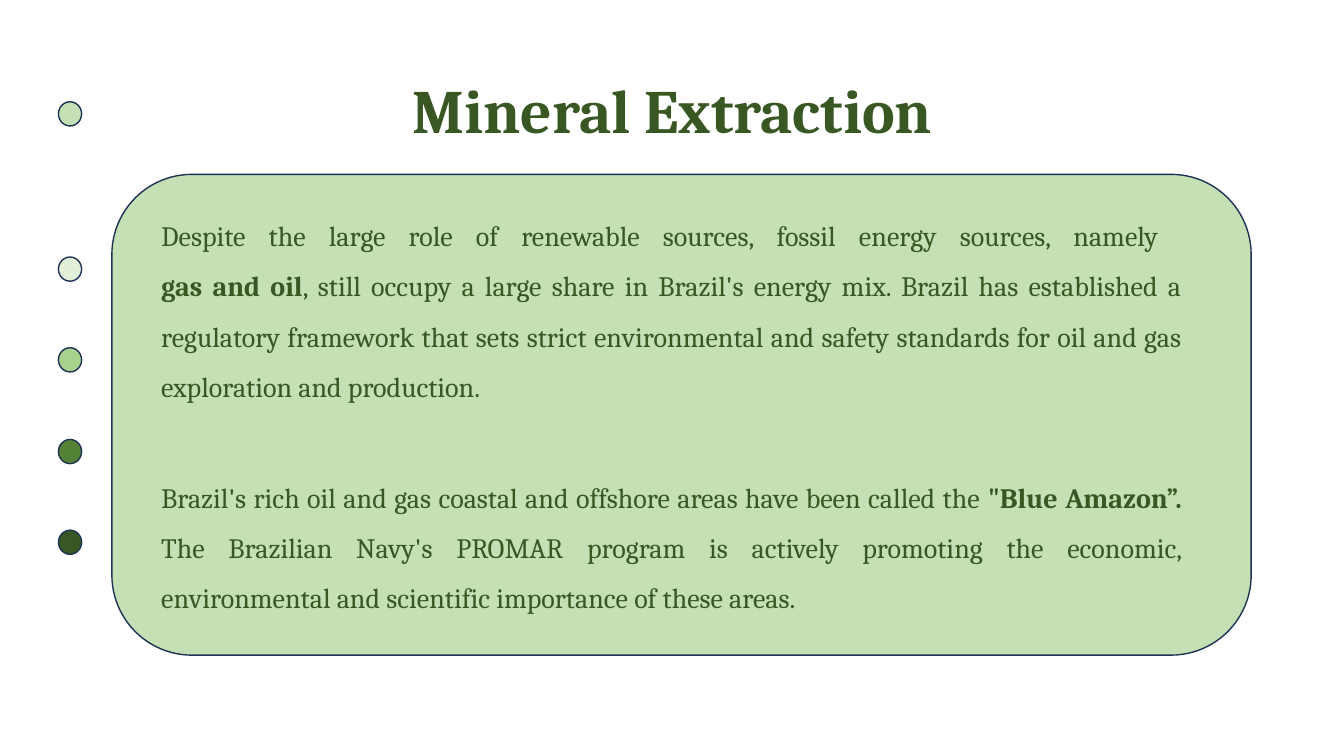
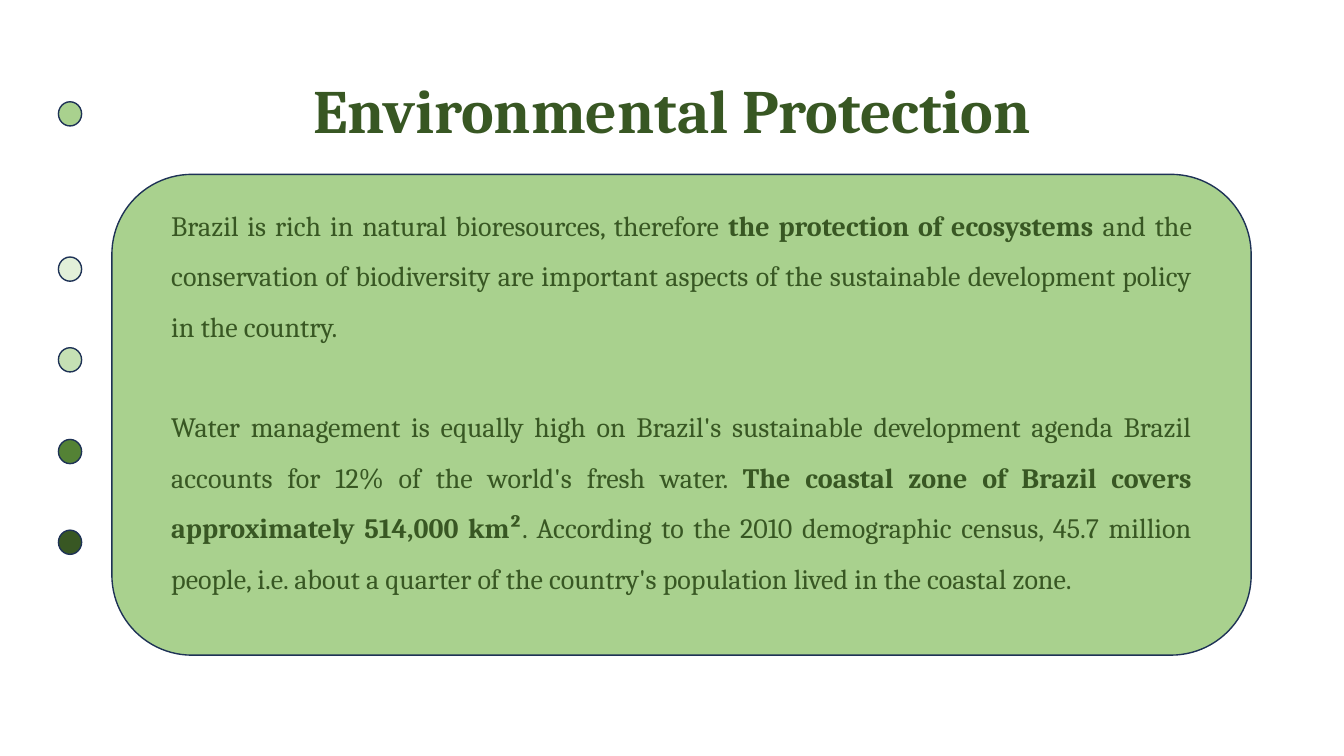
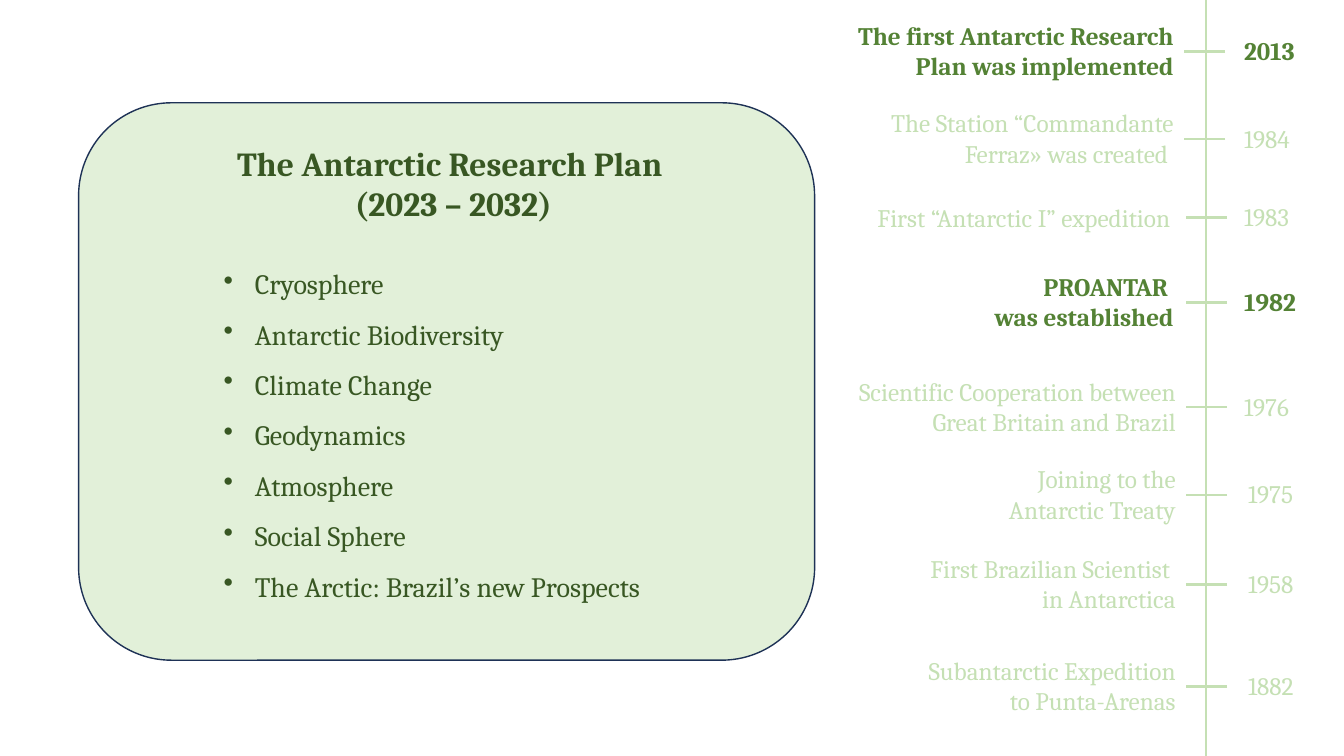
from lxml import etree
from pptx import Presentation
from pptx.dml.color import RGBColor
from pptx.enum import shapes, text
from pptx.oxml import ns
from pptx.util import Pt

PX = 9144  # 100 px to the inch
FONT = "Cambria"
PALE, LIGHT, MID, DARK, DEEP = GREENS = "E2F0D9", "C5E0B4", "A9D18E", "548235", "385723"
OUTLINE = "1E3256"
TITLE_ONLY, BLANK = 5, 6
LEFT, CENTER, RIGHT, JUSTIFY = (text.PP_ALIGN.LEFT, text.PP_ALIGN.CENTER,
                                text.PP_ALIGN.RIGHT, text.PP_ALIGN.JUSTIFY)

# Text: *asterisks* mark bold words
MINERALS = [
    "Despite the large role of renewable sources, fossil energy sources, namely \n"
    "*gas and oil*, still occupy a large share in Brazil's energy mix. Brazil has "
    "established a regulatory framework that sets strict environmental and safety "
    "standards for oil and gas exploration and production.",
    "Brazil's rich oil and gas coastal and offshore areas have been called the "
    "*\"Blue Amazon”. *The Brazilian Navy's PROMAR program is actively promoting the "
    "economic, environmental and scientific importance of these areas.",
]
PROTECTION = [
    "Brazil is rich in natural bioresources, therefore *the protection of ecosystems *"
    "and the conservation of biodiversity are important aspects of the sustainable "
    "development policy in the country.",
    "Water management is equally high on Brazil's sustainable development agenda Brazil "
    "accounts for 12% of the world's fresh water. *The coastal zone of Brazil covers "
    "approximately 514,000 km²*. According to the 2010 demographic census, 45.7 million "
    "people, i.e. about a quarter of the country's population lived in the coastal zone.",
]
TOPICS = ["Cryosphere", "Antarctic Biodiversity", "Climate Change", "Geodynamics",
          "Atmosphere", "Social Sphere", "The Arctic: Brazil’s new Prospects"]

# Year, middle, event, event's right edge, tick's left end, year's left edge
EVENTS = [
    ("2013", 51, "*The first Antarctic Research Plan was implemented*", 1174, 1174, 1224),
    ("1984", 138, "The Station “Commandante Ferraz» was created ", 1174, 1174, 1224),
    ("1983", 216, "First “Antarctic I” expedition ", 1176, 1176, 1224),
    ("1982", 300, "*PROANTAR \nwas established*", 1174, 1176, 1224),
    ("1976", 404, "Scientific Cooperation between Great Britain and Brazil", 1176, 1176, 1224),
    ("1975", 491, "Joining to the\nAntarctic Treaty", 1176, 1176, 1228),
    ("1958", 580, "First Brazilian Scientist \nin Antarctica", 1176, 1176, 1228),
    ("1882", 681, "Subantarctic Expedition\nto Punta-Arenas", 1176, 1176, 1228),
]


def px(*lengths):
    return [n * PX for n in lengths]


def rgb(color):
    return RGBColor.from_string(color)


def write(p, content, size, color, align=LEFT, spacing=1.0):
    p.alignment, p.line_spacing = align, spacing
    p.font.name, p.font.size = FONT, Pt(size)
    p.font.color.rgb = rgb(color)
    for i, part in enumerate(content.split("*")):
        for j, line in enumerate(part.split("\n")):
            if j:
                p.add_line_break()
            if line:
                r = p.add_run()
                r.text = line
                r.font.bold = i % 2 == 1


def add_bullet(p):
    pPr = p._p.get_or_add_pPr()
    pPr.set("marL", str(31 * PX))
    pPr.set("indent", str(-31 * PX))
    bullet = etree.Element(ns.qn("a:buChar"), char="•")
    pPr.insert_element_before(bullet, "a:tabLst", "a:defRPr", "a:extLst")


def add_text(slide, box, paragraphs, size, color, align=LEFT, spacing=1.0, gap=0, bullets=False):
    tf = slide.shapes.add_textbox(*px(*box)).text_frame
    tf.word_wrap = True
    for i, content in enumerate(paragraphs):
        p = tf.add_paragraph() if i else tf.paragraphs[0]
        write(p, content, size, color, align, spacing)
        if i and gap:
            p.space_before = Pt(gap)
        if bullets:
            add_bullet(p)


def add_shape(slide, kind, box, fill):
    sp = slide.shapes.add_shape(kind, *px(*box))
    sp.shadow.inherit = False
    sp.fill.solid()
    sp.fill.fore_color.rgb = rgb(fill)
    sp.line.color.rgb = rgb(OUTLINE)
    sp.line.width = Pt(1)


def add_panel(slide, box, fill):
    add_shape(slide, shapes.MSO_SHAPE.ROUNDED_RECTANGLE, box, fill)


def add_line(slide, x1, y1, x2, y2):
    line = slide.shapes.add_connector(shapes.MSO_CONNECTOR.STRAIGHT, *px(x1, y1, x2, y2))
    line.line.color.rgb = rgb(LIGHT)
    line.line.width = Pt(1.75)
    etree.SubElement(line._element.spPr, ns.qn("a:effectLst"))


def add_title(slide, title):
    sp = slide.shapes.title
    sp.left, sp.top, sp.width, sp.height = px(92, 40, 1150, 145)
    tf = sp.text_frame
    tf.auto_size = text.MSO_AUTO_SIZE.NONE
    tf.vertical_anchor = text.MSO_ANCHOR.MIDDLE
    write(tf.paragraphs[0], f"*{title}*", 44, DEEP, CENTER, 0.9)


def add_dots(slide, current):
    """The current section's dot sits by the title, the others below it."""
    others = [c for c in GREENS if c != current]
    tops = [101] + [round(255 + 90.4 * i) for i in range(len(others))]
    for top, color in zip(tops, [current] + others):
        add_shape(slide, shapes.MSO_SHAPE.OVAL, (58, top, 23, 24), color)


def section_slide(prs, title, color, box, paragraphs, gap):
    slide = prs.slides.add_slide(prs.slide_layouts[TITLE_ONLY])
    add_title(slide, title)
    add_dots(slide, color)
    add_panel(slide, (111, 173, 1130, 477), color)
    add_text(slide, box, paragraphs, 20, DEEP, JUSTIFY, 1.5, gap)


def add_timeline(slide):
    add_line(slide, 1196, 750, 1196, 0)
    for year, middle, event, right, tick, year_left in EVENTS:
        bold = event.startswith("*")
        color = DARK if bold else LIGHT
        height = 40 if year == "1983" else 71  # a single line of text
        add_line(slide, tick + 41, middle, tick, middle)
        add_text(slide, (right - 376, middle - (height + 1) // 2, 376, height),
                 [event], 18, color, RIGHT)
        add_text(slide, (year_left, middle - 21, 109, 40),
                 [f"*{year}*" if bold else year], 18, color)


def antarctic_slide(prs):
    slide = prs.slides.add_slide(prs.slide_layouts[BLANK])
    add_timeline(slide)
    add_panel(slide, (78, 102, 730, 553), PALE)
    add_text(slide, (206, 137, 480, 91),
             ["*The Antarctic Research Plan\n (2023 – 2032)*"], 24, DEEP, CENTER)
    add_text(slide, (212, 243, 467, 357), TOPICS, 20, DEEP, spacing=1.5, bullets=True)


def main():
    prs = Presentation()
    prs.slide_width, prs.slide_height = px(1333, 750)
    section_slide(prs, "Mineral Extraction", LIGHT, (150, 195, 1032, 505), MINERALS, 43)
    section_slide(prs, "Environmental Protection", MID, (160, 185, 1032, 579), PROTECTION, 36)
    antarctic_slide(prs)
    prs.save("out.pptx")


if __name__ == "__main__":
    main()
